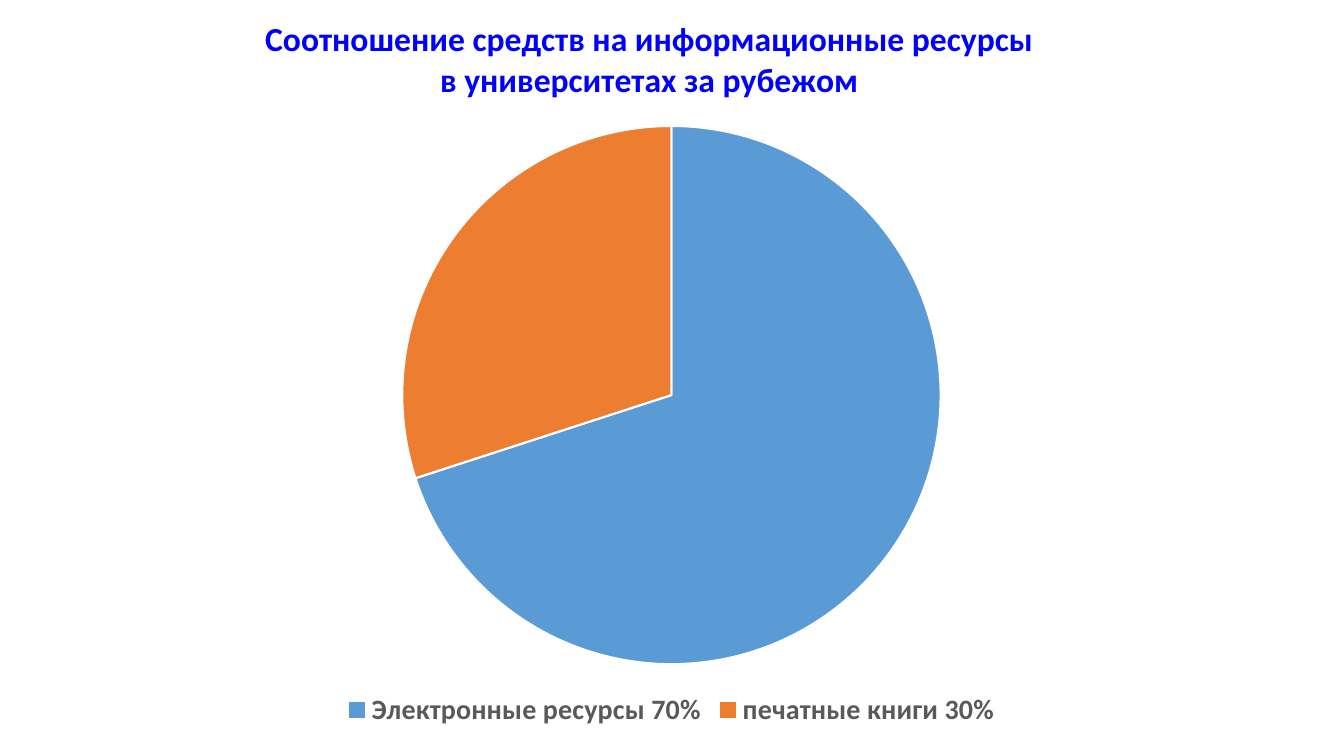
from lxml import etree
from pptx import Presentation
from pptx import util as u
from pptx.chart import data
from pptx.dml import color
from pptx.enum import chart as kinds, text
from pptx.oxml import ns

FRAME = (0.08, 0, 13.16, 7.27)


def tint(code):
    return color.RGBColor.from_string(code)


class Deck:
    face = "Calibri"
    blue, grey, white = "0000FF", "595959", "FFFFFF"
    fills = ("5B9BD5", "ED7D31")

    def __init__(self):
        self.show = Presentation()
        self.show.slide_width = u.Inches(13.33)
        self.show.slide_height = u.Inches(7.5)
        self.slide = self.show.slides.add_slide(self.show.slide_layouts[6])

    def style(self, font, size, code):
        font.name, font.size, font.bold = self.face, u.Pt(size), True
        font.color.rgb = tint(code)

    def place(self, node, index, **spots):
        """Fix a chart part at a spot given in slide inches."""
        old = node.find(ns.qn("c:layout"))
        if old is not None:
            node.remove(old)
        layout = etree.Element(ns.qn("c:layout"))
        manual = etree.SubElement(layout, ns.qn("c:manualLayout"))

        def put(tag, val):
            etree.SubElement(manual, ns.qn("c:" + tag)).set("val", str(val))

        if "w" in spots:
            put("layoutTarget", "inner")
        put("xMode", "edge")
        put("yMode", "edge")
        left, top, wide, high = FRAME
        start = {"x": left, "y": top, "w": 0, "h": 0}
        span = {"x": wide, "y": high, "w": wide, "h": high}
        for key, inch in spots.items():
            put(key, (inch - start[key]) / span[key])
        node.insert(index, layout)

    def pie(self, shares):
        table = data.CategoryChartData()
        table.categories = list(shares)
        table.add_series("Series 1", list(shares.values()))
        chart = self.slide.shapes.add_chart(
            kinds.XL_CHART_TYPE.PIE, *map(u.Inches, FRAME), table).chart
        chart.font.name, chart.font.size = self.face, u.Pt(10)
        plot = chart.plots[0]
        plot.vary_by_categories = True
        for i, code in enumerate(self.fills):
            look = plot.series[0].points[i].format
            look.fill.solid()
            look.fill.fore_color.rgb = tint(code)
            look.line.color.rgb = tint(self.white)
            look.line.width = u.Pt(1.5)
        area = chart.element.find(".//" + ns.qn("c:plotArea"))
        self.place(area, 0, x=3.99, y=1.25, w=5.34, h=5.34)
        return chart

    def title(self, chart, lines):
        chart.has_title = True
        title = chart.chart_title
        title.include_in_layout = False
        frame = title.text_frame
        for i, line in enumerate(lines):
            para = frame.add_paragraph() if i else frame.paragraphs[0]
            para.text = line
            para.alignment = text.PP_ALIGN.CENTER
            self.style(para.font, 24, self.blue)
        self.place(title.element, 1, x=2.6, y=0.15)

    def legend(self, chart):
        chart.has_legend = True
        chart.legend.position = kinds.XL_LEGEND_POSITION.BOTTOM
        chart.legend.include_in_layout = False
        self.style(chart.legend.font, 20, self.grey)


def main():
    deck = Deck()
    # Pie of spending shares
    chart = deck.pie({"Электронные ресурсы 70%": 70, "печатные книги 30%": 30})
    # Heading and legend
    deck.title(chart, ["Соотношение средств на информационные ресурсы",
                       "в университетах за рубежом"])
    deck.legend(chart)
    deck.show.save("out.pptx")


if __name__ == "__main__":
    main()
